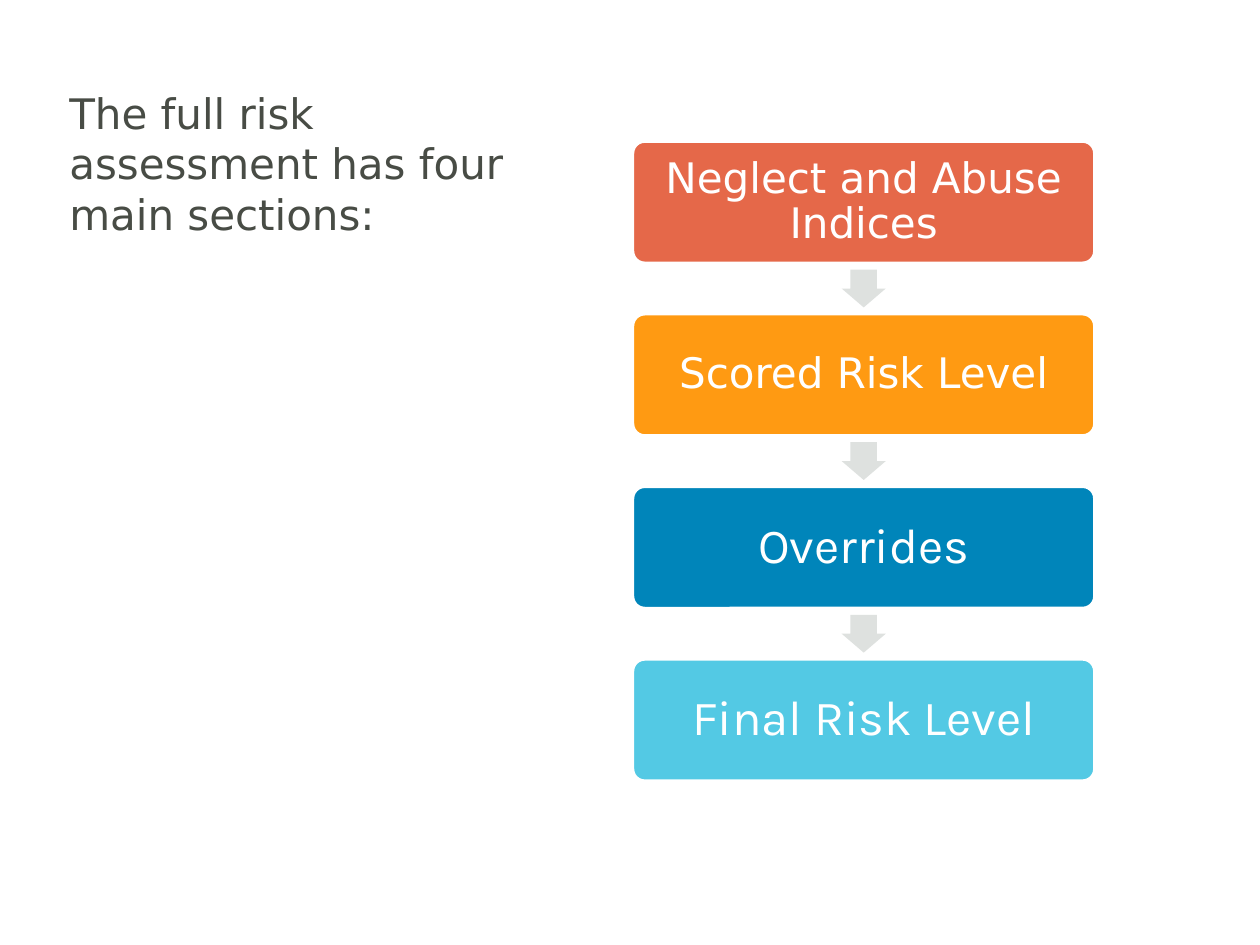
"""Build a slide listing the four sections of the risk assessment as a flow."""
from pptx import Presentation
from pptx import util as u
from pptx.dml.color import RGBColor
from pptx.enum import shapes, text

WHITE = RGBColor(0xFF, 0xFF, 0xFF)
INK = RGBColor(0x48, 0x4C, 0x45)
ARROW_GREY = RGBColor(0xDE, 0xE1, 0xDF)
CORAL = RGBColor(0xE5, 0x68, 0x49)
ORANGE = RGBColor(0xFF, 0x9A, 0x12)
BLUE = RGBColor(0x00, 0x85, 0xBA)
SKY = RGBColor(0x53, 0xC9, 0xE4)

HEADING = "The full risk assessment has four main sections:"
SECTIONS = [
    ("Neglect and Abuse Indices", CORAL, "DejaVu Sans", 24),
    ("Scored Risk Level", ORANGE, "DejaVu Sans", 24),
    ("Overrides", BLUE, "Karla", 28),
    ("Final Risk Level", SKY, "Karla", 28),
]

WIDTH, HEIGHT = 10, 7.5
LEFT, TOP = 5.02, 1.12
BOX_WIDTH, BOX_HEIGHT, PITCH = 3.67, 0.97, 1.37
ARROW_WIDTH, ARROW_HEIGHT = 0.35, 0.3


def write(shape, words, font, size, color, align, margins):
    frame = shape.text_frame
    frame.word_wrap = True
    frame.auto_size = text.MSO_AUTO_SIZE.NONE
    frame.vertical_anchor = text.MSO_ANCHOR.MIDDLE
    frame.margin_left = frame.margin_right = u.Inches(margins[0])
    frame.margin_top = frame.margin_bottom = u.Inches(margins[1])
    para = frame.paragraphs[0]
    para.alignment = align
    span = para.add_run()
    span.text = words
    span.font.name = font
    span.font.size = u.Pt(size)
    span.font.color.rgb = color
    return para


def add_filled(page, kind, left, top, width, height, color):
    shape = page.shapes.add_shape(kind, *map(u.Inches, (left, top, width, height)))
    shape.shadow.inherit = False
    shape.fill.solid()
    shape.fill.fore_color.rgb = color
    shape.line.fill.background()
    return shape


def add_section(page, top, words, color, font, size):
    box = add_filled(page, shapes.MSO_SHAPE.ROUNDED_RECTANGLE,
                     LEFT, top, BOX_WIDTH, BOX_HEIGHT, color)
    box.adjustments[0] = 0.1
    box.line.color.rgb = WHITE
    box.line.width = u.Pt(2)
    para = write(box, words, font, size, WHITE, text.PP_ALIGN.CENTER, (0.12, 0.12))
    para.line_spacing = 0.9


def add_arrow(page, box_bottom):
    left = LEFT + (BOX_WIDTH - ARROW_WIDTH) / 2
    top = box_bottom + (PITCH - BOX_HEIGHT - ARROW_HEIGHT) / 2
    arrow = add_filled(page, shapes.MSO_SHAPE.DOWN_ARROW,
                       left, top, ARROW_WIDTH, ARROW_HEIGHT, ARROW_GREY)
    arrow.adjustments[0] = 0.6
    arrow.adjustments[1] = 0.5


def main():
    deck = Presentation()
    deck.slide_width, deck.slide_height = u.Inches(WIDTH), u.Inches(HEIGHT)
    page = deck.slides.add_slide(deck.slide_layouts.get_by_name("Title Only"))

    title = page.shapes.title
    title.left, title.top = u.Inches(0.48), u.Inches(0.46)
    title.width, title.height = u.Inches(4.04), u.Inches(1.67)
    write(title, HEADING, "DejaVu Sans", 24, INK, text.PP_ALIGN.LEFT, (0.07, 0.04))

    for row, section in enumerate(SECTIONS):
        top = TOP + row * PITCH
        add_section(page, top, *section)
        if row < len(SECTIONS) - 1:
            add_arrow(page, top + BOX_HEIGHT)

    deck.save("out.pptx")


if __name__ == "__main__":
    main()
